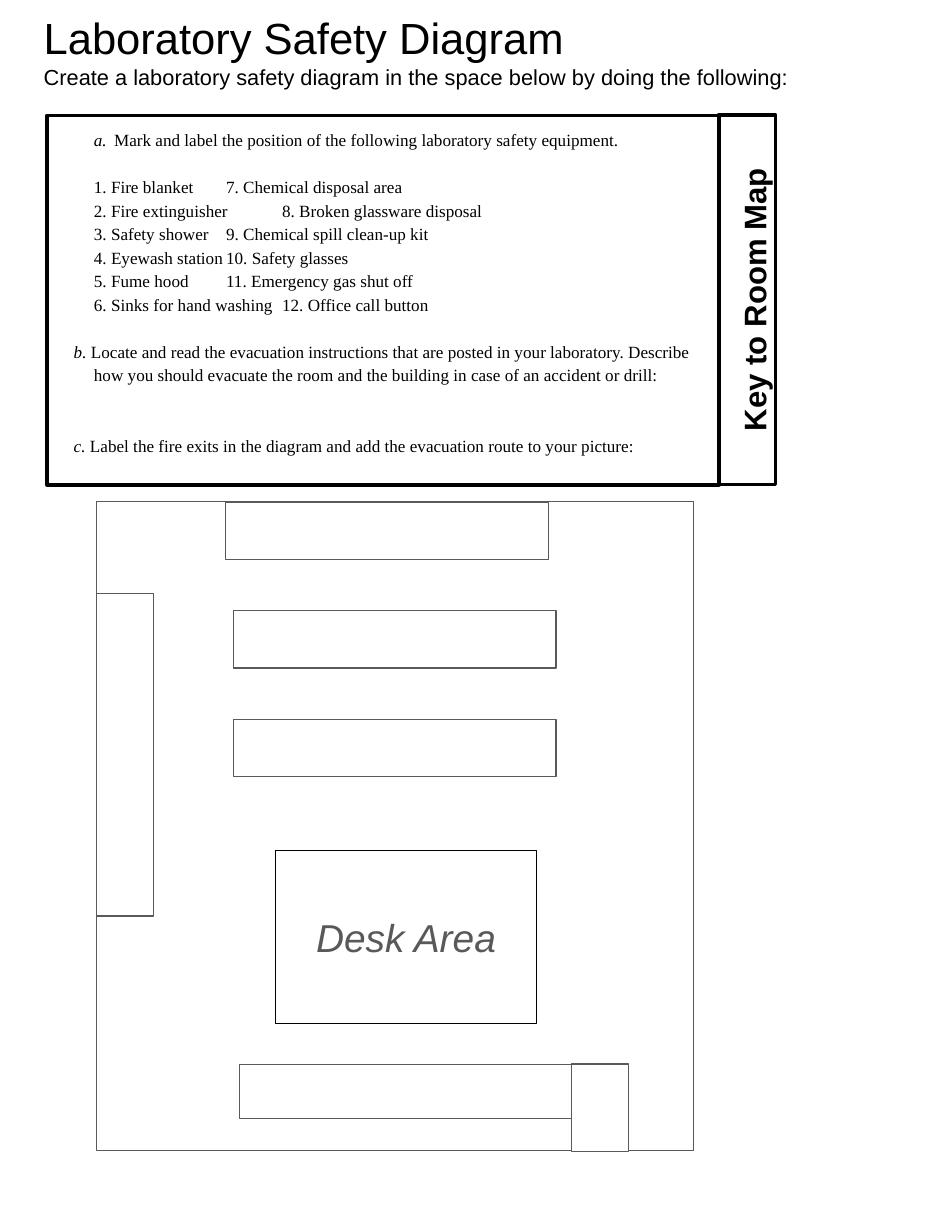
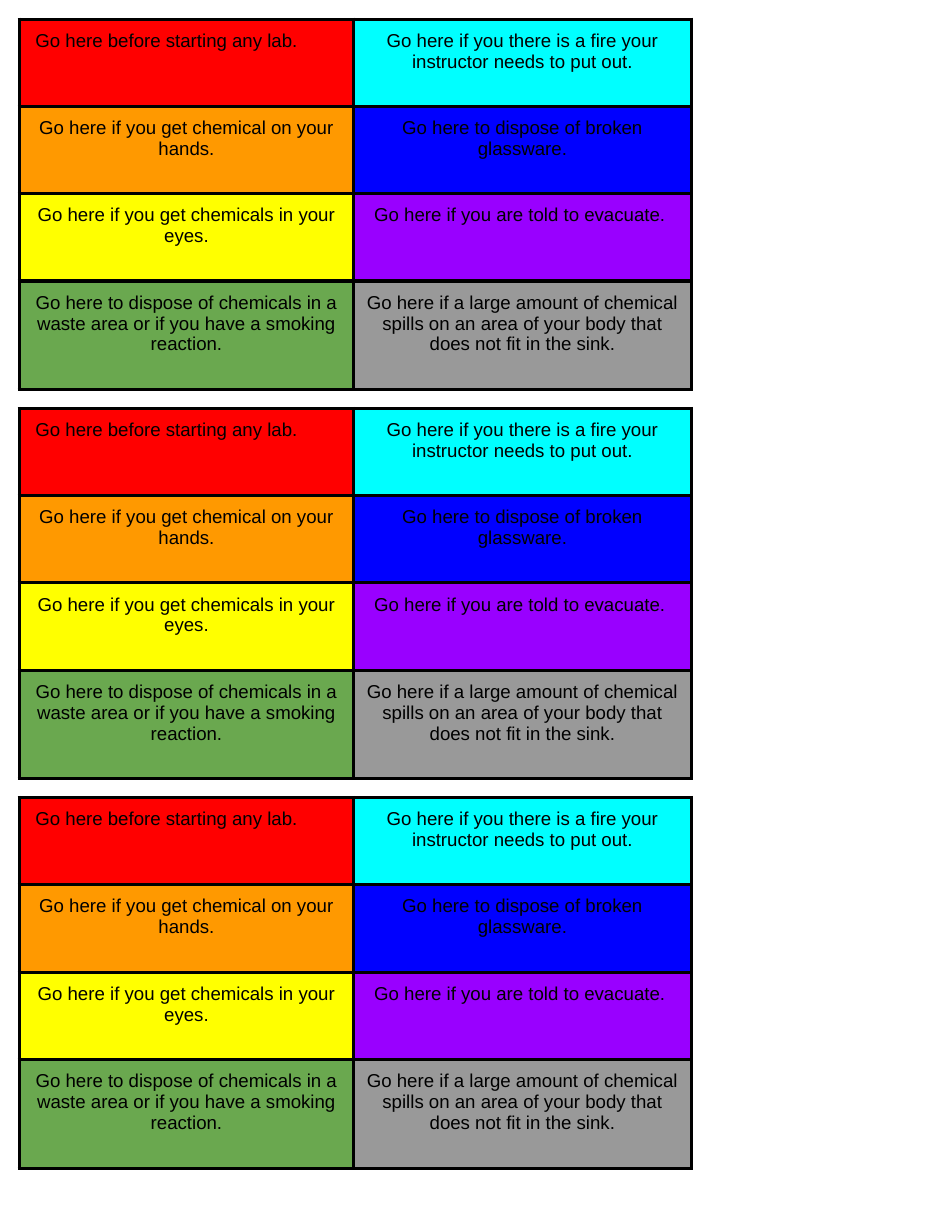
import pptx
import pptx.dml.color
import pptx.enum.shapes
import pptx.enum.text
import pptx.oxml
import pptx.oxml.ns
import pptx.util
from lxml import etree

ALIGN = pptx.enum.text.PP_ALIGN
ANCHOR = pptx.enum.text.MSO_ANCHOR
BLACK, GREY, WHITE = "000000", "595959", "FFFFFF"

EQUIPMENT = [
    ("1. Fire blanket", "7. Chemical disposal area"),
    ("2. Fire extinguisher", "8. Broken glassware disposal"),
    ("3. Safety shower", "9. Chemical spill clean-up kit"),
    ("4. Eyewash station", "10. Safety glasses"),
    ("5. Fume hood", "11. Emergency gas shut off"),
    ("6. Sinks for hand washing", "12. Office call button"),
]
TASKS = [
    ("b. ", "Locate and read the evacuation instructions that are posted in your laboratory. "
            "Describe how you should evacuate the room and the building in case of an accident or drill:", 15),
    ("c. ", "Label the fire exits in the diagram and add the evacuation route to your picture:", 30),
]
STATIONS = [
    [(" Go here before starting any lab.", "FF0000"),
     ("Go here if you there is a fire your instructor needs to put out.", "00FFFF")],
    [("Go here if you get chemical on your hands.", "FF9900"),
     ("Go here to dispose of broken glassware.", "0000FF")],
    [("Go here if you get chemicals in your eyes.", "FFFF00"),
     ("Go here if you are told to evacuate. ", "9900FF")],
    [("Go here to dispose of chemicals in a waste area or if you have a smoking reaction.", "6AA84F"),
     ("Go here if a large amount of chemical spills on an area of your body that does not fit in the sink.",
      "999999")],
]


def rgb(code):
    return pptx.dml.color.RGBColor.from_string(code)


class Sheet:
    """Holds the style and current slide; lengths are percentages of the slide's size."""

    heavy, thin, inset = 2.25, 0.75, 0.1

    def __init__(self):
        self.deck = pptx.Presentation()
        self.deck.slide_width = pptx.util.Inches(8.5)
        self.deck.slide_height = pptx.util.Inches(11)
        self.slide = None

    def start(self, layout):
        self.slide = self.deck.slides.add_slide(self.deck.slide_layouts[layout])

    def across(self, share):
        return int(self.deck.slide_width * share / 100)

    def down(self, share):
        return int(self.deck.slide_height * share / 100)

    def area(self, left, top, width, height):
        return self.across(left), self.down(top), self.across(width), self.down(height)

    def frame(self, holder, anchor=ANCHOR.TOP):
        text = holder.text_frame
        text.word_wrap = True
        text.auto_size = pptx.enum.text.MSO_AUTO_SIZE.NONE
        text.vertical_anchor = anchor
        text.margin_left = text.margin_right = pptx.util.Inches(self.inset)
        text.margin_top = text.margin_bottom = pptx.util.Inches(self.inset)
        return text

    def paragraph(self, text, runs, size, font="Arial", color=BLACK, align=ALIGN.LEFT,
                  spacing=1.0, before=0, margin=0, indent=0, tab=None):
        first = text.paragraphs[0]
        line = text.add_paragraph() if first.runs else first
        line.alignment = align
        line.line_spacing = spacing
        line.space_before = pptx.util.Pt(before)
        for words, look in runs:
            run = line.add_run()
            run.text = words
            run.font.name, run.font.size = font, pptx.util.Pt(size)
            run.font.color.rgb = rgb(color)
            run.font.bold, run.font.italic = "b" in look, "i" in look
        properties = line._p.get_or_add_pPr()
        properties.set("marL", str(pptx.util.Inches(margin)))
        properties.set("indent", str(pptx.util.Inches(indent)))
        if tab:
            stops = etree.SubElement(properties, pptx.oxml.ns.qn("a:tabLst"))
            etree.SubElement(stops, pptx.oxml.ns.qn("a:tab"), pos=str(pptx.util.Inches(tab)), algn="l")

    def title(self, lines, *place):
        heading = self.slide.shapes.title
        heading.left, heading.top, heading.width, heading.height = self.area(*place)
        text = self.frame(heading)
        for words, size in lines:
            self.paragraph(text, [(words, "")], size)

    def box(self, *place, line=BLACK, weight=heavy, fill=None, group=None, turn=0):
        shapes = (group or self.slide).shapes
        outline = shapes.add_shape(pptx.enum.shapes.MSO_SHAPE.RECTANGLE, *self.area(*place))
        outline.shadow.inherit = False
        outline.rotation = turn
        outline.line.color.rgb = rgb(line)
        outline.line.width = pptx.util.Pt(weight)
        if fill:
            outline.fill.solid()
            outline.fill.fore_color.rgb = rgb(fill)
        else:
            outline.fill.background()
        return outline

    def furniture(self, group, *place):
        return self.box(*place, line=GREY, weight=self.thin, fill=WHITE, group=group)

    def borders(self, cell):
        properties = cell._tc.get_or_add_tcPr()
        for side in ("lnL", "lnR", "lnT", "lnB"):
            edge = etree.SubElement(properties, pptx.oxml.ns.qn("a:" + side),
                                    w=str(pptx.util.Pt(self.heavy)))
            paint = etree.SubElement(edge, pptx.oxml.ns.qn("a:solidFill"))
            etree.SubElement(paint, pptx.oxml.ns.qn("a:srgbClr"), val=BLACK)

    def key(self, left, top, widths, heights, stations):
        place = self.area(left, top, sum(widths), sum(heights))
        grid = self.slide.shapes.add_table(len(heights), len(widths), *place).table
        grid.first_row = grid.horz_banding = False
        for column, width in zip(grid.columns, widths):
            column.width = self.across(width)
        for row, height, pair in zip(grid.rows, heights, stations):
            row.height = self.down(height)
            for cell, (words, color) in zip(row.cells, pair):
                self.borders(cell)
                cell.fill.solid()
                cell.fill.fore_color.rgb = rgb(color)
                cell.margin_left = cell.margin_right = pptx.util.Inches(self.inset)
                cell.margin_top = cell.margin_bottom = pptx.util.Inches(self.inset)
                align = ALIGN.LEFT if words.startswith(" ") else ALIGN.CENTER
                self.paragraph(cell.text_frame, [(words, "")], 12, align=align, before=12)


def instructions(sheet):
    text = sheet.frame(sheet.box(4.94, 9.36, 70.59, 30))
    body = {"size": 11, "font": "Times New Roman", "spacing": 1.15}
    sheet.paragraph(text, [("a.", "i"), ("\tMark and label the position of the following "
                                         "laboratory safety equipment.", "")],
                    indent=0.32, tab=0.58, **body)
    for number, (near, far) in enumerate(EQUIPMENT, 1):
        sheet.paragraph(text, [(near + "\t" + far, "")], indent=0.32,
                        tab=2.32 if number == 5 else 3.32,
                        before=15 if number == 1 else 0, **body)
    for letter, task, gap in TASKS:
        sheet.paragraph(text, [(letter, "i"), (task, "")], margin=0.32, indent=-0.18,
                        before=gap, **body)
    label = sheet.frame(sheet.box(59.06, 22, 38.82, 4.64, turn=270))
    sheet.paragraph(label, [("Key to Room Map", "b")], 20, align=ALIGN.CENTER,
                    spacing=1.15, before=12)


def room_map(sheet):
    room = sheet.slide.shapes.add_group_shape()
    sheet.furniture(room, 10.12, 40.73, 62.71, 52.64)
    sheet.furniture(room, 10.12, 48.18, 6, 26.18)
    for row, left in enumerate((23.71, 24.53, 24.53)):
        sheet.furniture(room, left, 40.77 + 8.82 * row, 33.88, 4.64)
    sheet.furniture(room, 25.12, 86.41, 34.94, 4.36)
    desks = sheet.box(28.94, 69, 27.41, 14.09, weight=sheet.thin, group=room)
    sheet.paragraph(sheet.frame(desks, ANCHOR.MIDDLE), [("Desk Area", "i")], 25,
                    color=GREY, align=ALIGN.CENTER)
    sheet.furniture(room, 60, 86.36, 6, 7.09)


def main():
    sheet = Sheet()
    sheet.start(5)
    sheet.title([("Laboratory Safety Diagram", 28),
                 ("Create a laboratory safety diagram in the space below by doing the following:", 14)],
                3.41, 0, 93.18, 11.09)
    instructions(sheet)
    room_map(sheet)
    sheet.start(6)
    for copy_number in range(3):
        sheet.key(2, 1.55 + 31.59 * copy_number, (35.18, 35.41), (7.09, 7.09, 7.09, 8.82), STATIONS)
    sheet.deck.save("out.pptx")


if __name__ == "__main__":
    main()
